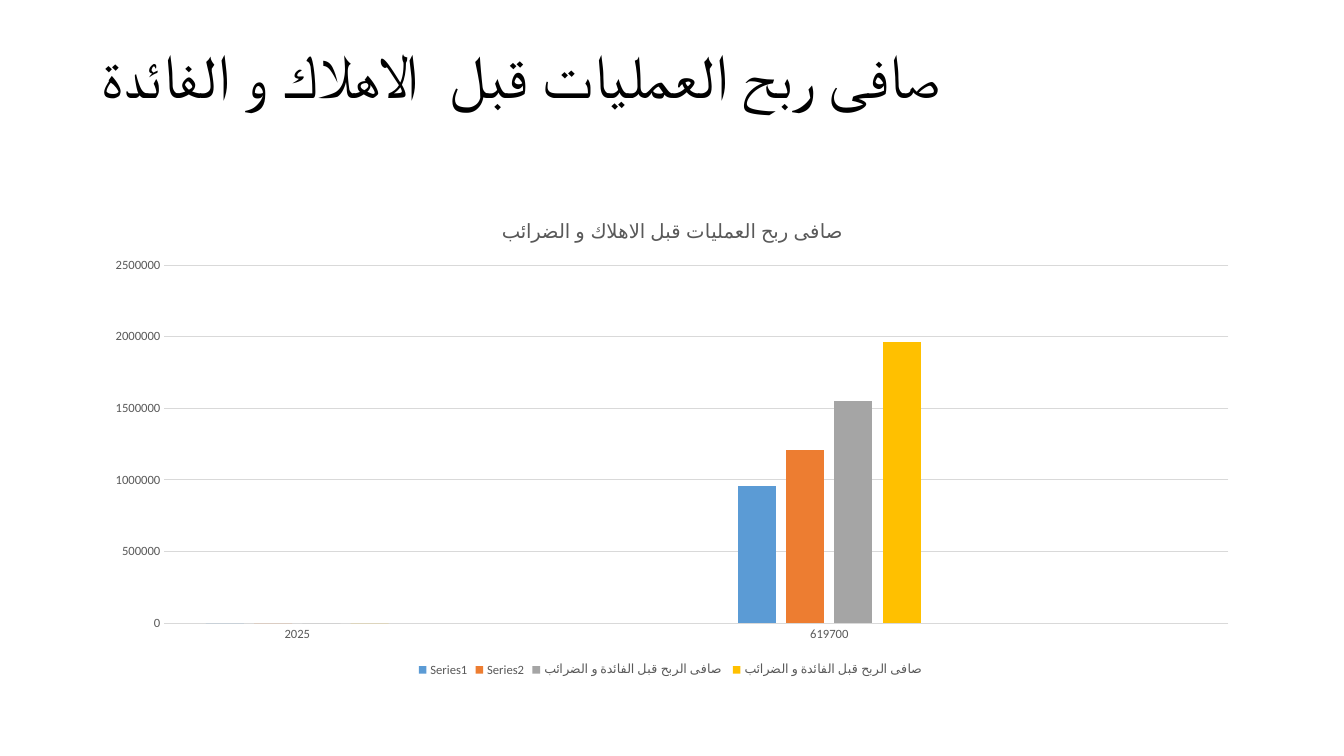
from dataclasses import dataclass
from typing import Optional

from pptx import Presentation
from pptx import util as u
from pptx.chart.axis import _BaseAxis
from pptx.chart.chart import Chart
from pptx.chart.data import CategoryChartData
from pptx.dml.color import RGBColor
from pptx.enum import chart as ch
from pptx.enum import text
from pptx.slide import Slide
from pptx.text.text import Font


@dataclass(frozen=True)
class Theme:
    font: str = "Calibri"
    black: str = "000000"
    label: str = "595959"
    rule: str = "D9D9D9"
    heading_size: int = 44
    caption_size: int = 14
    label_size: int = 9
    rule_width: float = 0.75


@dataclass(frozen=True)
class Box:
    left: float
    top: float
    width: float
    height: float

    def lengths(self) -> list[u.Cm]:
        return [u.Cm(side) for side in (self.left, self.top, self.width, self.height)]


@dataclass(frozen=True)
class Profit:
    name: str
    values: tuple[Optional[int], ...]
    color: str


THEME = Theme()
HEADING_BOX = Box(2.33, 1.02, 29.21, 3.68)
CHART_BOX = Box(2.33, 5.08, 29.21, 12.09)

HEADING = "صافى ربح العمليات قبل  الاهلاك و الفائدة"
CAPTION = "صافى ربح العمليات قبل الاهلاك و الضرائب"
BEFORE_INTEREST = "صافى الربح قبل الفائدة و الضرائب "
CATEGORIES = ("2025", "", "619700", "")
PROFITS = (
    Profit("Series1", (0, None, 960000, None), "5B9BD5"),
    Profit("Series2", (0, None, 1210000, None), "ED7D31"),
    Profit(BEFORE_INTEREST, (0, None, 1550000, None), "A5A5A5"),
    Profit(BEFORE_INTEREST, (0, None, 1960000, None), "FFC000"),
)


def style_font(font: Font, size: int, color: str) -> None:
    font.name = THEME.font
    font.size = u.Pt(size)
    font.bold = False
    font.color.rgb = RGBColor.from_string(color)


def style_rule(line) -> None:
    line.color.rgb = RGBColor.from_string(THEME.rule)
    line.width = u.Pt(THEME.rule_width)


def style_axis(axis: _BaseAxis) -> None:
    axis.major_tick_mark = axis.minor_tick_mark = ch.XL_TICK_MARK.NONE
    style_font(axis.tick_labels.font, THEME.label_size, THEME.label)


def add_heading(slide: Slide) -> None:
    heading = slide.shapes.title
    heading.left, heading.top, heading.width, heading.height = HEADING_BOX.lengths()
    frame = heading.text_frame
    frame.text = HEADING
    frame.word_wrap = True
    frame.auto_size = text.MSO_AUTO_SIZE.NONE
    frame.vertical_anchor = text.MSO_ANCHOR.TOP
    line = frame.paragraphs[0]
    line.alignment = text.PP_ALIGN.LEFT
    line.line_spacing = 0.9
    style_font(line.runs[0].font, THEME.heading_size, THEME.black)


def add_profit_chart(slide: Slide) -> Chart:
    data = CategoryChartData()
    data.categories = CATEGORIES
    for profit in PROFITS:
        data.add_series(profit.name, profit.values)
    chart = slide.shapes.add_chart(
        ch.XL_CHART_TYPE.COLUMN_CLUSTERED, *CHART_BOX.lengths(), data
    ).chart
    style_font(chart.font, 10, THEME.black)

    # Columns
    columns = chart.plots[0]
    columns.vary_by_categories = False
    columns.gap_width = 219
    columns.overlap = -27
    for series, profit in zip(columns.series, PROFITS):
        series.format.fill.solid()
        series.format.fill.fore_color.rgb = RGBColor.from_string(profit.color)
    return chart


def format_chart(chart: Chart) -> None:
    # Caption
    caption = chart.chart_title.text_frame
    caption.text = CAPTION
    style_font(caption.paragraphs[0].runs[0].font, THEME.caption_size, THEME.label)
    chart.chart_title.include_in_layout = False

    # Axes and gridlines
    style_axis(chart.category_axis)
    style_rule(chart.category_axis.format.line)
    amounts = chart.value_axis
    style_axis(amounts)
    amounts.minimum_scale, amounts.maximum_scale = 0, 2500000
    amounts.major_unit = 500000
    amounts.format.line.fill.background()
    amounts.has_major_gridlines = True
    style_rule(amounts.major_gridlines.format.line)

    # Legend
    chart.has_legend = True
    chart.legend.position = ch.XL_LEGEND_POSITION.BOTTOM
    chart.legend.include_in_layout = False
    style_font(chart.legend.font, THEME.label_size, THEME.label)


def main() -> None:
    deck = Presentation()
    deck.slide_width, deck.slide_height = u.Cm(33.87), u.Cm(19.05)
    slide = deck.slides.add_slide(deck.slide_layouts.get_by_name("Title Only"))
    add_heading(slide)
    format_chart(add_profit_chart(slide))
    deck.save("out.pptx")


if __name__ == "__main__":
    main()
